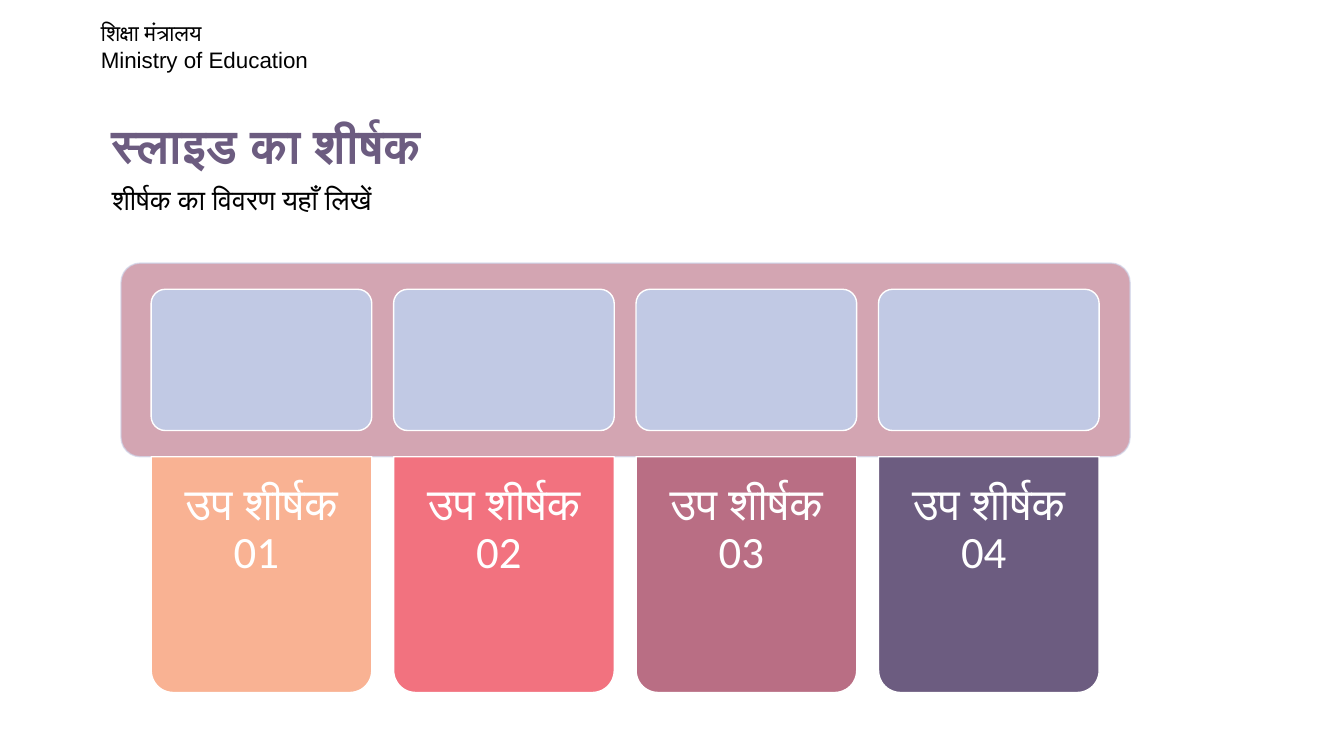
"""Build a slide with a title and four captioned columns under a panel."""
from lxml.etree import SubElement
from pptx import Presentation
from pptx.dml.color import RGBColor
from pptx.enum.shapes import MSO_SHAPE as Shape
from pptx.enum.text import PP_ALIGN as Align
from pptx.oxml.ns import qn
from pptx.util import Cm, Pt

BLACK = RGBColor(0x00, 0x00, 0x00)
WHITE = RGBColor(0xFF, 0xFF, 0xFF)
PEACH = RGBColor(0xF9, 0xB2, 0x93)
CORAL = RGBColor(0xF2, 0x72, 0x7F)
MAUVE = RGBColor(0xB9, 0x6E, 0x84)
PLUM = RGBColor(0x6C, 0x5C, 0x80)
BLUE = RGBColor(0xC1, 0xC9, 0xE4)
PALE = RGBColor(0xCF, 0xD5, 0xEA)

HEAD = ["शिक्षा मंत्रालय", "Ministry of Education"]
TITLE = "स्लाइड का शीर्षक"
DETAIL = "शीर्षक का विवरण यहाँ लिखें"
COLUMNS = [
    ("उप शीर्षक 01 ", PEACH),
    ("उप शीर्षक 02 ", CORAL),
    ("उप शीर्षक 03 ", MAUVE),
    ("उप शीर्षक 04 ", PLUM),
]

PANEL = (3.05, 6.63, 25.43, 4.88)
LEFT, STEP, WIDE = 3.81, 6.11, 5.56
TILE_TOP, TILE_HIGH = 7.29, 3.56
BASE_TOP, BASE_HIGH = 11.51, 5.94
INSET = 0.18

deck = Presentation()
deck.slide_width, deck.slide_height = Cm(33.87), Cm(19.05)
slide = deck.slides.add_slide(deck.slide_layouts[6])


def write(lines, box, size, color, font="Calibri", bold=False,
          align=Align.LEFT, space=0.9, pad=None):
    frame = slide.shapes.add_textbox(*map(Cm, box)).text_frame
    frame.word_wrap = True
    if pad is not None:
        frame.margin_left = frame.margin_right = Cm(pad)
        frame.margin_top = frame.margin_bottom = Cm(pad)
    frame.text = "\n".join(lines)
    for para in frame.paragraphs:
        para.alignment, para.line_spacing = align, space
        for run in para.runs:
            run.font.name, run.font.size = font, Pt(size)
            run.font.bold, run.font.color.rgb = bold, color


def draw(kind, box, fill, line, *bends):
    shape = slide.shapes.add_shape(kind, *map(Cm, box))
    shape.shadow.inherit = False
    shape.fill.solid()
    shape.fill.fore_color.rgb = fill
    shape.line.color.rgb = line
    shape.line.width = Pt(1)
    for place, bend in enumerate(bends):
        shape.adjustments[place] = bend
    return shape


write(HEAD, (2.29, 0.36, 13.18, 1.63), 16, BLACK, font="Arial", space=1.0)
write([TITLE], (2.57, 2.95, 15.57, 1.19), 34, PLUM, font="Arial", bold=True)
write([DETAIL], (2.57, 4.57, 18.26, 0.94), 20, BLACK)

panel = draw(Shape.ROUNDED_RECTANGLE, PANEL, MAUVE, PALE, 0.1)
tints = panel.element.spPr.iter(qn("a:srgbClr"))
for tint, alpha in zip(list(tints), ("62000", "67000")):
    SubElement(tint, qn("a:alpha")).set("val", alpha)

for index, (label, color) in enumerate(COLUMNS):
    x = LEFT + index * STEP
    draw(Shape.ROUNDED_RECTANGLE, (x, TILE_TOP, WIDE, TILE_HIGH),
         BLUE, WHITE, 0.1)
    base = draw(Shape.ROUND_2_SAME_RECTANGLE, (x, BASE_TOP, WIDE, BASE_HIGH),
                color, WHITE, 0.1, 0)
    base.rotation = 180
    write([label],
          (x + INSET, BASE_TOP, WIDE - 2 * INSET, BASE_HIGH - INSET),
          32, WHITE, align=Align.CENTER, pad=0.63)

deck.save("out.pptx")
